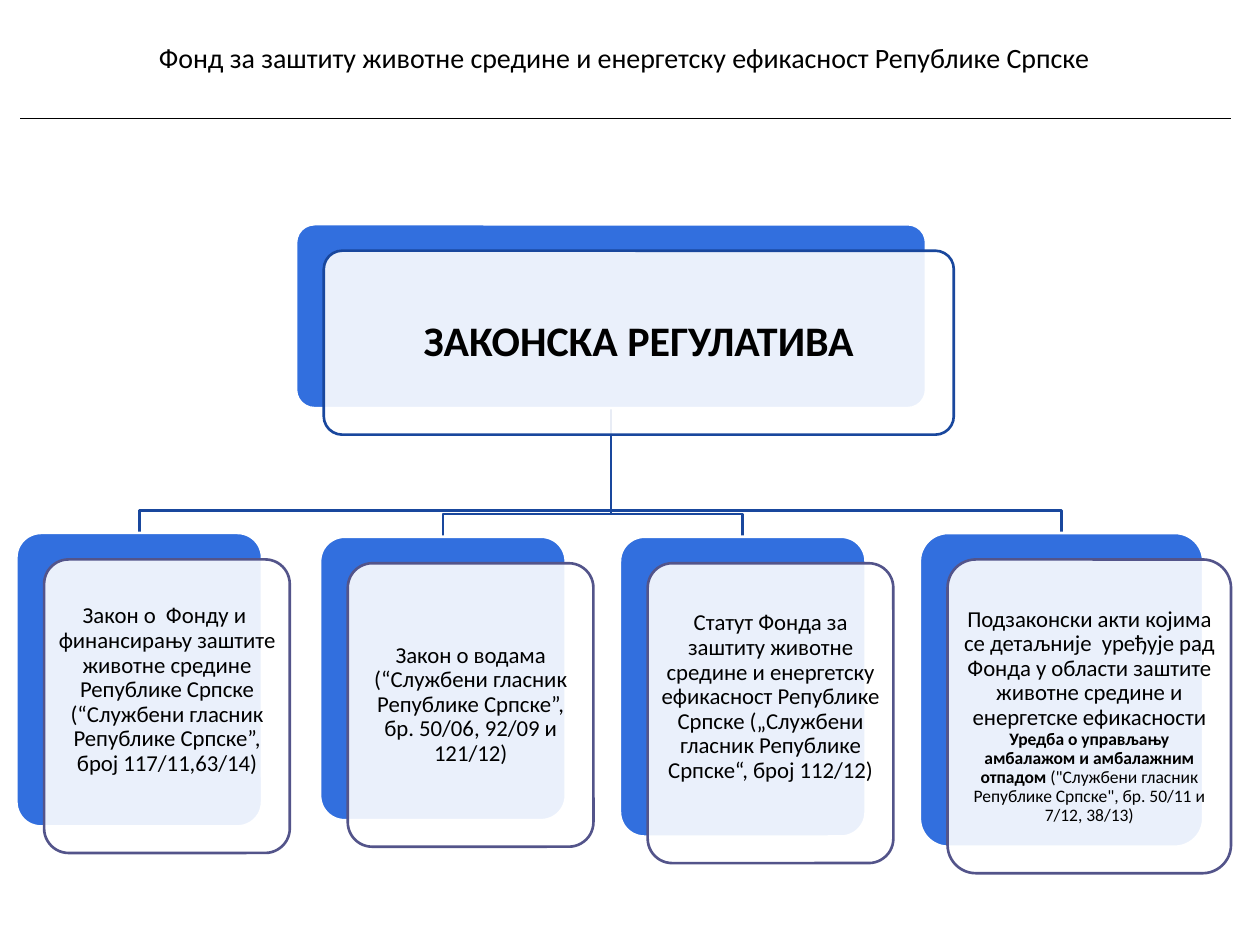
from lxml import etree
from pptx import Presentation
from pptx.dml.color import RGBColor
from pptx.enum import shapes, text
from pptx.oxml.ns import qn
from pptx.util import Inches, Pt

COLORS = {"black": "000000", "white": "FFFFFF", "blue": "326FDE",
          "navy": "19479D", "violet": "53548A"}
FONT = "Calibri"
TITLE = "Фонд за заштиту животне средине и енергетску ефикасност Републике Српске"
ROOT = {"box": (2.35, 1.78, 5, 1.46), "edge": "navy", "inset": 0.1, "lift": 0,
        "runs": [("ЗАКОНСКА РЕГУЛАТИВА", 24, True)]}
LAWS = [
    {"box": (0.13, 4.23, 1.95, 2.33), "lift": 0.25, "runs": [
        ("Закон о  Фонду и  финансирању заштите животне средине Републике Српске "
         "(“Службени гласник Републике Српске”, број 117/11,63/14)", 13, False)]},
    {"box": (2.54, 4.26, 1.95, 2.25), "lift": 0, "runs": [
        ("Закон о водама (“Службени гласник Републике Српске”, "
         "бр. 50/06, 92/09 и 121/12)", 13, False)]},
    {"box": (4.92, 4.26, 1.95, 2.38), "lift": 0.25, "runs": [
        ("Статут Фонда за заштиту животне средине и енергетску ефикасност "
         "Републике Српске („Службени гласник Републике Српске“, број 112/12)", 13, False)]},
    {"box": (7.3, 4.23, 2.25, 2.49), "lift": 0, "runs": [
        ("Подзаконски акти којима се детаљније  уређује рад Фонда у области заштите "
         "животне средине и енергетске ефикасности ", 13, False),
        ("Уредба о управљању амбалажом и амбалажним отпадом ", 10, True),
        ("(\"Службени гласник Републике Српске\", бр. 50/11 и 7/12, 38/13)", 10, False)]},
]
OFFSET = (0.22, 0.21)
ELBOW = 0.18


def rgb(name):
    return RGBColor.from_string(COLORS[name])


def style_line(sp, color, width):
    sp.line.color.rgb = rgb(color)
    sp.line.width = Pt(width)


def write_runs(p, runs):
    p.alignment = text.PP_ALIGN.CENTER
    p.line_spacing = 0.9
    for content, size, bold in runs:
        r = p.add_run()
        r.text = content
        r.font.name = FONT
        r.font.size = Pt(size)
        r.font.bold = bold
        r.font.color.rgb = rgb("black")


def add_panel(s, box, fill, edge):
    sp = s.shapes.add_shape(shapes.MSO_SHAPE.ROUNDED_RECTANGLE, *map(Inches, box))
    sp.adjustments[0] = 0.1
    sp.shadow.inherit = False
    sp.fill.solid()
    sp.fill.fore_color.rgb = rgb(fill)
    style_line(sp, edge, 1.5)
    return sp


def add_card(s, card):
    x, y, w, h = card["box"]
    add_panel(s, card["box"], "blue", "white")
    front = add_panel(s, (x + OFFSET[0], y + OFFSET[1], w, h),
                      "white", card.get("edge", "violet"))
    color = front.fill._xPr.find(qn("a:solidFill"))[0]
    etree.SubElement(color, qn("a:alpha"), val="90000")
    tf = front.text_frame
    tf.word_wrap = True
    tf.vertical_anchor = text.MSO_ANCHOR.MIDDLE
    inset = card.get("inset", 0.05)
    tf.margin_left = tf.margin_right = tf.margin_top = Inches(inset)
    tf.margin_bottom = Inches(inset + card["lift"])
    write_runs(tf.paragraphs[0], card["runs"])


def add_branch(s, parent, child):
    px, py, pw, ph = parent
    cx, cy, cw, _ = child
    start, end = px + pw / 2, cx + cw / 2
    turn = cy - ELBOW
    points = [(start, py + ph), (start, turn), (end, turn), (end, cy)]
    points = [(Inches(x), Inches(y)) for x, y in points]
    fb = s.shapes.build_freeform(*points[0])
    fb.add_line_segments(points[1:], close=False)
    sp = fb.convert_to_shape()
    sp.shadow.inherit = False
    sp.fill.background()
    style_line(sp, "navy", 1.5)


def main():
    prs = Presentation()
    prs.slide_width, prs.slide_height = Inches(10), Inches(7.5)
    s = prs.slides.add_slide(prs.slide_layouts[5])

    title = s.shapes.title
    title.left, title.top, title.width, title.height = map(Inches, (0.97, 0.3, 7.97, 0.39))
    tf = title.text_frame
    tf.word_wrap = True
    tf.auto_size = text.MSO_AUTO_SIZE.NONE
    tf.vertical_anchor = text.MSO_ANCHOR.TOP
    write_runs(tf.paragraphs[0], [(TITLE, 16, False)])

    rule = s.shapes.add_connector(shapes.MSO_CONNECTOR.STRAIGHT,
                                  *map(Inches, (0.16, 0.94, 9.77, 0.94)))
    style_line(rule, "black", 0.75)
    etree.SubElement(rule._element.spPr, qn("a:effectLst"))

    for law in reversed(LAWS):
        add_branch(s, ROOT["box"], law["box"])
    for card in [ROOT, *LAWS]:
        add_card(s, card)
    prs.save("out.pptx")


if __name__ == "__main__":
    main()
